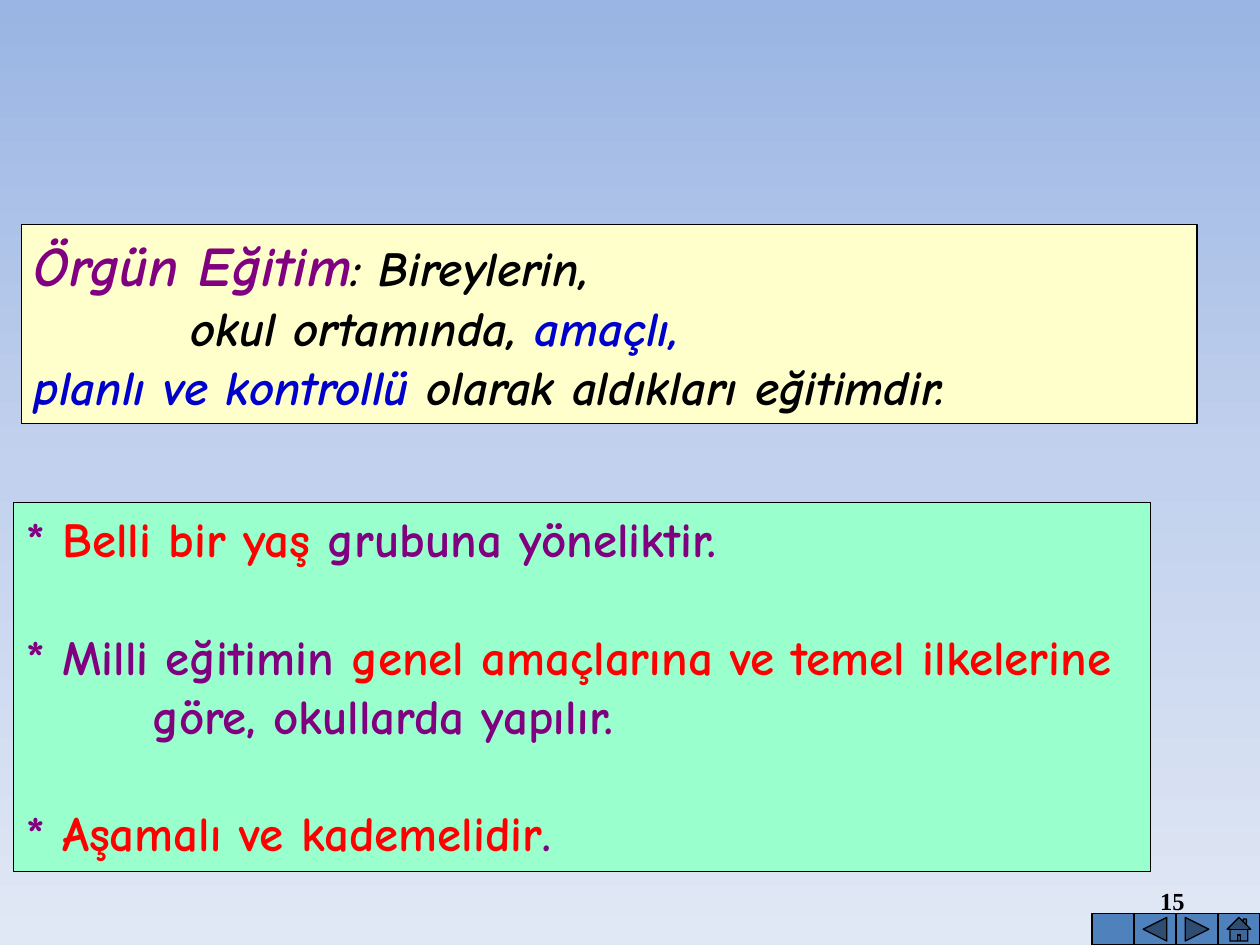
import copy

import pptx
import pptx.dml.color
import pptx.enum.shapes
import pptx.enum.text
import pptx.util

Inches = pptx.util.Inches
Pt = pptx.util.Pt
MSO_SHAPE = pptx.enum.shapes.MSO_SHAPE
MSO_ANCHOR = pptx.enum.text.MSO_ANCHOR

BLACK, PURPLE, RED, BLUE = "000000", "800080", "FF0000", "0000CC"


def rgb(value):
    return pptx.dml.color.RGBColor.from_string(value)


class SlideBuilder:
    body_font = "Comic Neue"
    number_font = "Times New Roman"
    body_size = 28
    button_fill = "4F81BD"

    def __init__(self, prs):
        self.slide = prs.slides.add_slide(prs.slide_layouts[6])

    def background(self, colors):
        fill = self.slide.background.fill
        fill.gradient()
        fill.gradient_angle = 270
        stops = fill._fill._gradFill.gsLst
        while len(stops) < len(colors):
            stops.append(copy.deepcopy(stops[-1]))
        for i, (stop, color) in enumerate(zip(fill.gradient_stops, colors)):
            stop.position = i / (len(colors) - 1)
            stop.color.rgb = rgb(color)

    def shape(self, kind, x, y, w, h, fill):
        sp = self.slide.shapes.add_shape(kind, Inches(x), Inches(y), Inches(w), Inches(h))
        sp.shadow.inherit = False
        sp.fill.solid()
        sp.fill.fore_color.rgb = rgb(fill)
        sp.line.color.rgb = rgb(BLACK)
        sp.line.width = Pt(0.75)
        return sp

    def panel(self, x, y, w, h, fill, paragraphs, italic=False, gap=0):
        tf = self.shape(MSO_SHAPE.RECTANGLE, x, y, w, h, fill).text_frame
        tf.word_wrap = True
        tf.vertical_anchor = MSO_ANCHOR.TOP
        tf.auto_size = pptx.enum.text.MSO_AUTO_SIZE.SHAPE_TO_FIT_TEXT
        for i, (left, first, runs) in enumerate(paragraphs):
            p = tf.add_paragraph() if i else tf.paragraphs[0]
            p.alignment = pptx.enum.text.PP_ALIGN.LEFT
            if i and gap:
                p.space_before = Pt(gap)
            pPr = p._p.get_or_add_pPr()
            pPr.set("marL", str(Inches(left)))
            pPr.set("indent", str(Inches(first)))
            for text, color, *size in runs:
                r = p.add_run()
                r.text = text
                self.style(r, self.body_font, size[0] if size else self.body_size, color)
                r.font.italic = italic

    def style(self, r, font, size, color):
        r.font.name = font
        r.font.size = Pt(size)
        r.font.bold = True
        r.font.color.rgb = rgb(color)

    def page_number(self, text, x, y, w, h):
        tf = self.slide.shapes.add_textbox(Inches(x), Inches(y), Inches(w), Inches(h)).text_frame
        tf.word_wrap = True
        tf.vertical_anchor = MSO_ANCHOR.MIDDLE
        tf.text = text
        p = tf.paragraphs[0]
        p.alignment = pptx.enum.text.PP_ALIGN.RIGHT
        self.style(p.runs[0], self.number_font, 14, BLACK)

    def buttons(self, kinds, right, y, h):
        w = 1 / 3
        for i, kind in enumerate(kinds):
            self.shape(kind, right - (len(kinds) - i) * w, y, w, h, self.button_fill)


def main():
    prs = pptx.Presentation()
    prs.slide_width = Inches(10)
    prs.slide_height = Inches(7.5)

    s = SlideBuilder(prs)
    s.background(["9AB5E4", "C2D1ED", "E1E8F5"])
    s.page_number("15", 7.17, 6.95, 2.33, 0.4)
    s.buttons([
        MSO_SHAPE.ACTION_BUTTON_CUSTOM,
        MSO_SHAPE.ACTION_BUTTON_BACK_OR_PREVIOUS,
        MSO_SHAPE.ACTION_BUTTON_FORWARD_OR_NEXT,
        MSO_SHAPE.ACTION_BUTTON_HOME,
    ], right=10, y=7.25, h=0.25)
    s.panel(0.17, 1.78, 9.33, 1.58, "FFFFCC", [
        (0, 0, [("Örgün Eğitim", PURPLE, 32), (": Bireylerin,", BLACK)]),
        (1.24, 0, [("okul ortamında, ", BLACK), ("amaçlı,", BLUE)]),
        (0, 0, [("planlı ve kontrollü ", BLUE), ("olarak aldıkları eğitimdir.", BLACK)]),
    ], italic=True)
    s.panel(0.11, 3.99, 9.02, 2.93, "99FFCC", [
        (0, 0, [("* ", PURPLE), ("Belli bir yaş ", RED), ("grubuna yöneliktir.", PURPLE)]),
        (1, -1, [("* Milli eğitimin ", PURPLE),
                 ("genel amaçlarına ve temel ilkelerine", RED),
                 (" göre, okullarda yapılır.", PURPLE)]),
        (0, 0, [("* ", PURPLE), ("Aşamalı ve kademelidir", RED), (".", PURPLE)]),
    ], gap=33.5)

    prs.save("out.pptx")


if __name__ == "__main__":
    main()
